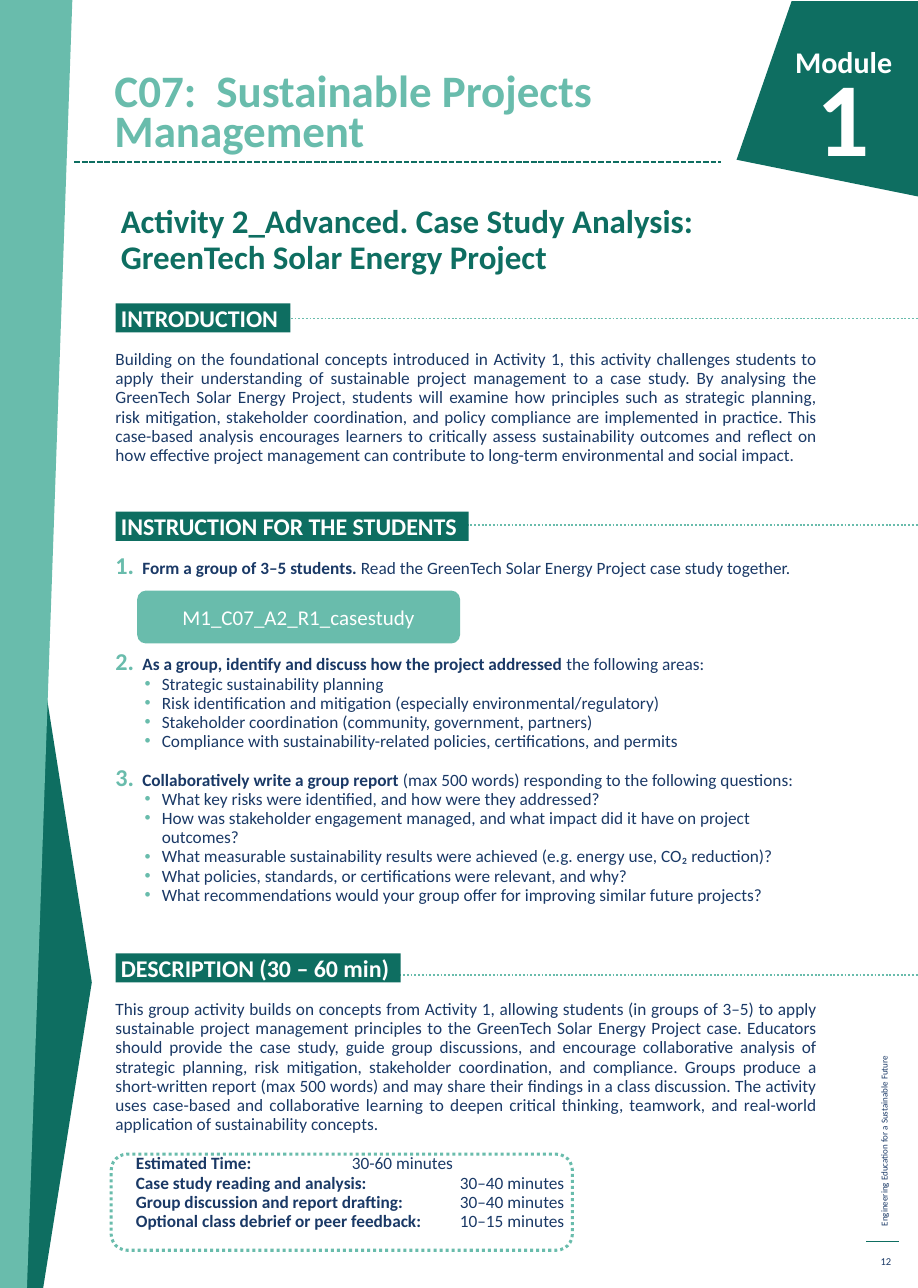
from lxml import etree
from pptx import Presentation
from pptx.dml.color import RGBColor
from pptx.enum.dml import MSO_LINE
from pptx.enum.shapes import MSO_CONNECTOR, MSO_SHAPE
from pptx.enum.text import MSO_ANCHOR, PP_ALIGN
from pptx.oxml.ns import qn
from pptx.util import Inches, Pt

GREEN = RGBColor(0x0E, 0x6E, 0x61)
MINT = RGBColor(0x69, 0xBC, 0xAC)
NAVY = RGBColor(0x1A, 0x39, 0x66)
WHITE = RGBColor(0xFF, 0xFF, 0xFF)
DASHED, DOTTED = MSO_LINE.SQUARE_DOT, MSO_LINE.ROUND_DOT
LEFT, CENTER, RIGHT, JUSTIFY = PP_ALIGN.LEFT, PP_ALIGN.CENTER, PP_ALIGN.RIGHT, PP_ALIGN.JUSTIFY
TOP, MIDDLE, BOTTOM = MSO_ANCHOR.TOP, MSO_ANCHOR.MIDDLE, MSO_ANCHOR.BOTTOM
PITCH = Pt(12.8)
BODY_SIZE = 11.5

deck = Presentation()
deck.slide_width, deck.slide_height = Inches(8.5), Inches(11.93)
page = deck.slides.add_slide(deck.slide_layouts[5])
shapes = page.shapes


def add_box(left, top, width, height, anchor=TOP):
    box = shapes.add_textbox(Inches(left), Inches(top), Inches(width), Inches(height))
    box.text_frame.word_wrap = True
    box.text_frame.vertical_anchor = anchor
    return box


def write(frame, text, size, color, bold=False, align=LEFT, pitch=None, lead=""):
    para = frame.paragraphs[0]
    if para.runs:
        para = frame.add_paragraph()
    para.alignment = align
    para.line_spacing = pitch
    font = para.font
    font.name, font.size, font.bold = "Calibri", Pt(size), bold
    font.color.rgb = color
    if lead:
        span = para.add_run()
        span.text = lead
        span.font.bold = True
    para.add_run().text = text
    return para


outlines = [
    (GREEN, [(0.4, 11.93), (0.23, 11.93), (0.23, 5.17), (0.83, 8.97), (0.85, 9.1)]),
    (MINT, [(0, 0), (0.67, 0), (0.25, 11.93), (0, 11.93)]),
    (GREEN, [(8.57, 0.01), (7.33, 0.01), (6.82, 1.48), (8.55, 1.83)]),
]
for color, points in outlines:
    corners = [(Inches(x), Inches(y)) for x, y in points]
    builder = shapes.build_freeform(*corners[0])
    builder.add_line_segments(corners[1:], close=True)
    outline = builder.convert_to_shape()
    outline.shadow.inherit = False
    outline.fill.solid()
    outline.fill.fore_color.rgb = color
    outline.line.fill.background()

rules = [
    (8.02, 8.32, 11.5, GREEN, 0.75, None),
    (0.69, 6.68, 1.5, GREEN, 1.25, DASHED),
    (2.52, 8.5, 2.95, MINT, 1.25, DOTTED),
    (2.52, 8.5, 4.86, MINT, 1.25, DOTTED),
    (2.52, 8.5, 9.03, MINT, 1.25, DOTTED),
]
for start, end, y, color, weight, dash in rules:
    rule = shapes.add_connector(MSO_CONNECTOR.STRAIGHT, Inches(start), Inches(y), Inches(end), Inches(y))
    rule.line.color.rgb = color
    rule.line.width = Pt(weight)
    rule.line.dash_style = dash
    etree.SubElement(rule._element.spPr, qn("a:effectLst"))

title = shapes.title
title.left, title.top, title.width, title.height = Inches(0.96), Inches(0.78), Inches(5.36), Inches(1.05)
title.text_frame.word_wrap = True
title.text_frame.vertical_anchor = BOTTOM
title.text_frame.margin_bottom = Inches(0.38)
write(title.text_frame, "C07:  Sustainable Projects Management", 30, MINT, True, pitch=Pt(26.8))

subtitle = add_box(1.02, 1.85, 6.58, 1.05)
write(subtitle.text_frame, "Activity 2_Advanced. Case Study Analysis: GreenTech Solar Energy Project",
      22, GREEN, True, pitch=0.9)
module_label = add_box(6.56, 0.35, 1.8, 1.42)
write(module_label.text_frame, "Module", 20, WHITE, True, RIGHT)
module_number = add_box(6.35, 0.43, 1.8, 1.42)
write(module_number.text_frame, "1", 70, WHITE, True, RIGHT)
footer = add_box(5.94, 9.11, 4.49, 0.2)
footer.rotation = 270
write(footer.text_frame, "Engineering Education for a Sustainable Future", 6, NAVY)
page_number = add_box(8.02, 11.54, 0.33, 0.29, MIDDLE)
write(page_number.text_frame, "12", 7, NAVY, align=RIGHT)

labels = [
    (MSO_SHAPE.RECTANGLE, 1.07, 2.81, 1.62, 0.27, GREEN, "INTRODUCTION", 16, True, LEFT),
    (MSO_SHAPE.RECTANGLE, 1.07, 4.74, 3.27, 0.27, GREEN, "INSTRUCTION FOR THE STUDENTS", 16, True, LEFT),
    (MSO_SHAPE.RECTANGLE, 1.07, 8.83, 2.64, 0.27, GREEN, "DESCRIPTION (30 – 60 min)", 16, True, LEFT),
    (MSO_SHAPE.ROUNDED_RECTANGLE, 1.27, 5.47, 2.99, 0.49, MINT, "M1_C07_A2_R1_casestudy", 14, False, CENTER),
]
for kind, left, top, width, height, color, text, size, bold, align in labels:
    label = shapes.add_shape(kind, Inches(left), Inches(top), Inches(width), Inches(height))
    label.shadow.inherit = False
    label.fill.solid()
    label.fill.fore_color.rgb = color
    label.line.fill.background()
    frame = label.text_frame
    frame.margin_left = frame.margin_right = Inches(0.05)
    frame.margin_top = frame.margin_bottom = 0
    frame.vertical_anchor = MIDDLE
    write(frame, text, size, WHITE, bold, align)

passages = [
    (3.19, 1.17, "Building on the foundational concepts introduced in Activity 1, this activity challenges students to apply their understanding of sustainable project management to a case study. By analysing the GreenTech Solar Energy Project, students will examine how principles such as strategic planning, risk mitigation, stakeholder coordination, and policy compliance are implemented in practice. This case-based analysis encourages learners to critically assess sustainability outcomes and reflect on how effective project management can contribute to long-term environmental and social impact."),
    (9.21, 1.34, "This group activity builds on concepts from Activity 1, allowing students (in groups of 3–5) to apply sustainable project management principles to the GreenTech Solar Energy Project case. Educators should provide the case study, guide group discussions, and encourage collaborative analysis of strategic planning, risk mitigation, stakeholder coordination, and compliance. Groups produce a short-written report (max 500 words) and may share their findings in a class discussion. The activity uses case-based and collaborative learning to deepen critical thinking, teamwork, and real-world application of sustainability concepts."),
]
for top, height, text in passages:
    passage = add_box(0.97, top, 6.69, height)
    write(passage.text_frame, text, BODY_SIZE, NAVY, align=JUSTIFY, pitch=PITCH)

steps = [
    (0, "Form a group of 3–5 students. ", "Read the GreenTech Solar Energy Project case study together.", []),
    (4, "As a group, identify and discuss how the project addressed ", "the following areas:", [
        "Strategic sustainability planning",
        "Risk identification and mitigation (especially environmental/regulatory)",
        "Stakeholder coordination (community, government, partners)",
        "Compliance with sustainability-related policies, certifications, and permits",
    ]),
    (1, "Collaboratively write a group report ", "(max 500 words) responding to the following questions:", [
        "What key risks were identified, and how were they addressed?",
        "How was stakeholder engagement managed, and what impact did it have on project outcomes?",
        "What measurable sustainability results were achieved (e.g. energy use, CO₂ reduction)?",
        "What policies, standards, or certifications were relevant, and why?",
        "What recommendations would your group offer for improving similar future projects?",
    ]),
]
instructions = add_box(0.96, 5.13, 6.7, 3.4).text_frame
for number, (gap_lines, lead, text, points) in enumerate(steps, 1):
    entries = [(lead, text)] + [("", point) for point in points]
    for lead, text in entries:
        para = write(instructions, text, BODY_SIZE, NAVY, pitch=PITCH, lead=lead)
        para.space_before = PITCH * gap_lines if lead else Pt(0)
        indent, hanging = (0.26, -0.25) if lead else (0.44, -0.16)
        properties = para._p.get_or_add_pPr()
        properties.set("marL", str(Inches(indent)))
        properties.set("indent", str(Inches(hanging)))
        bullet_color = etree.Element(qn("a:buClr"))
        etree.SubElement(bullet_color, qn("a:srgbClr"), val=str(MINT))
        bullet_size = etree.Element(qn("a:buSzPct"), val="140000" if lead else "100000")
        bullet_font = etree.Element(qn("a:buFont"), typeface="Calibri" if lead else "Arial")
        if lead:
            bullet = etree.Element(qn("a:buAutoNum"), type="arabicPeriod", startAt=str(number))
        else:
            bullet = etree.Element(qn("a:buChar"), char="•")
        for element in (bullet_color, bullet_size, bullet_font, bullet):
            properties.find(qn("a:defRPr")).addprevious(element)

time_frame = shapes.add_shape(MSO_SHAPE.ROUNDED_RECTANGLE, Inches(1.03), Inches(10.69), Inches(4.27), Inches(0.89))
time_frame.shadow.inherit = False
time_frame.fill.background()
time_frame.line.color.rgb = MINT
time_frame.line.width = Pt(2)
time_frame.line.dash_style = DOTTED

times = [
    ("Estimated Time:", "30-60 minutes", 2),
    ("Case study reading and analysis:", "30–40 minutes", 3),
    ("Group discussion and report drafting:", "30–40 minutes", 3),
    ("Optional class debrief or peer feedback:", "10–15 minutes", 3),
]
schedule = add_box(1.16, 10.64, 4.6, 0.82).text_frame
for task, duration, tab_position in times:
    para = write(schedule, "\t" + duration, BODY_SIZE, NAVY, pitch=PITCH, lead=task)
    tabs = etree.Element(qn("a:tabLst"))
    etree.SubElement(tabs, qn("a:tab"), pos=str(Inches(tab_position)), algn="l")
    para._p.pPr.find(qn("a:defRPr")).addprevious(tabs)

deck.save("out.pptx")
